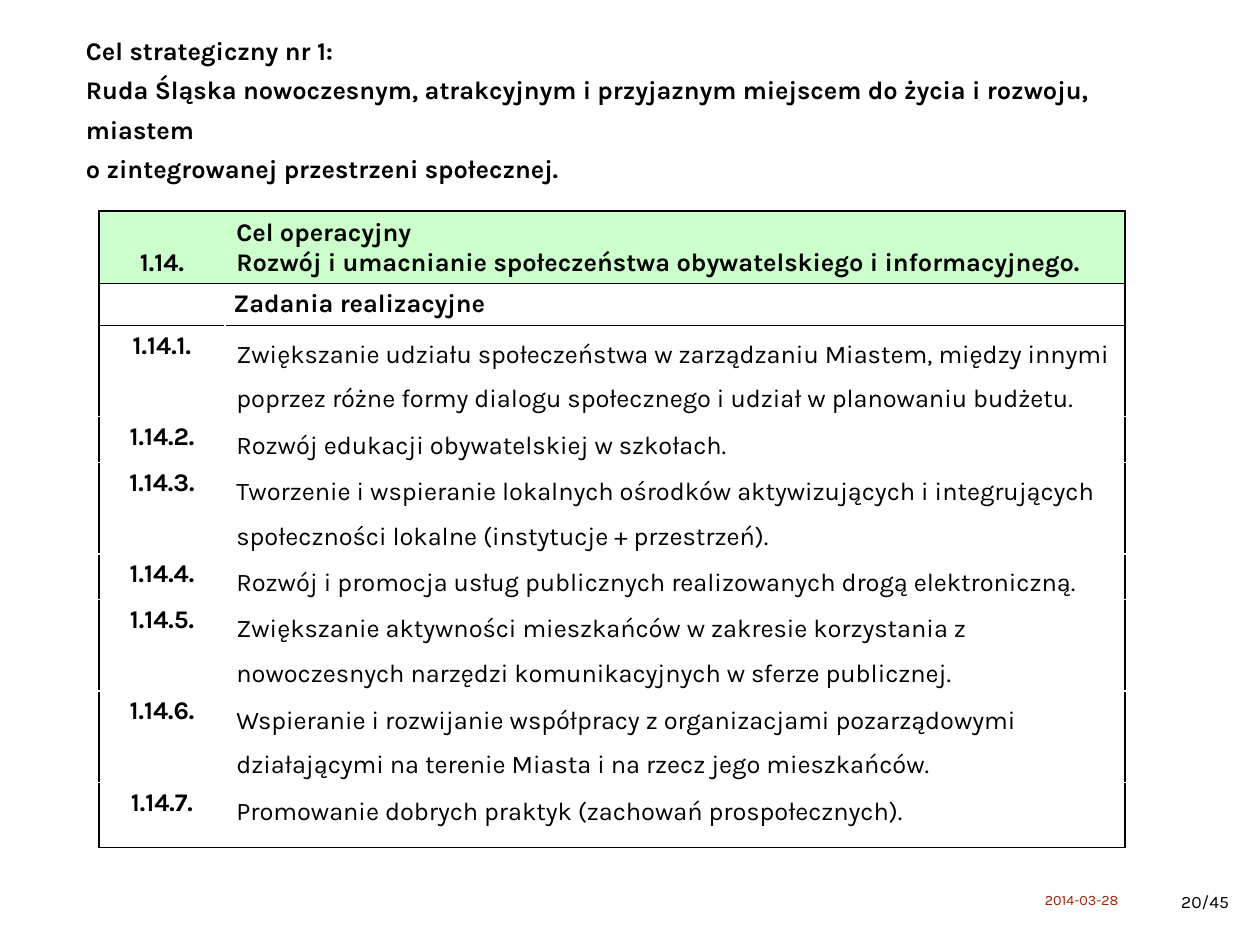
from pptx import Presentation
from pptx import util as u
from pptx.dml.color import RGBColor
from pptx.enum import text
from pptx.oxml import parse_xml
from pptx.oxml.ns import nsdecls

PX = 8000
FONT = "Karla"
COLORS = {"ink": "000000", "paper": "FFFFFF", "date": "A31F09", "header": "CCFFCC"}
LEFT, CENTER, RIGHT = text.PP_ALIGN.LEFT, text.PP_ALIGN.CENTER, text.PP_ALIGN.RIGHT
TOP, MIDDLE, BOTTOM = text.MSO_ANCHOR.TOP, text.MSO_ANCHOR.MIDDLE, text.MSO_ANCHOR.BOTTOM

GOAL = [
    "Cel strategiczny nr 1:",
    "Ruda Śląska nowoczesnym, atrakcyjnym i przyjaznym miejscem do życia i rozwoju, miastem",
    "o zintegrowanej przestrzeni społecznej.",
]
OPERATIONAL_GOAL = [
    "Cel operacyjny",
    "Rozwój i umacnianie społeczeństwa obywatelskiego i informacyjnego.",
]
TASKS = [
    "Zwiększanie udziału społeczeństwa w zarządzaniu Miastem, między innymi poprzez różne formy dialogu społecznego i udział w planowaniu budżetu.",
    "Rozwój edukacji obywatelskiej w szkołach.",
    "Tworzenie i wspieranie lokalnych ośrodków aktywizujących i integrujących społeczności lokalne (instytucje + przestrzeń).",
    "Rozwój i promocja usług publicznych realizowanych drogą elektroniczną.",
    "Zwiększanie aktywności mieszkańców w zakresie korzystania z nowoczesnych narzędzi komunikacyjnych w sferze publicznej.",
    "Wspieranie i rozwijanie współpracy z organizacjami pozarządowymi działającymi na terenie Miasta i na rzecz jego mieszkańców.",
    "Promowanie dobrych praktyk (zachowań prospołecznych).",
]
COL_WIDTHS = [126, 900]
ROW_HEIGHTS = [71, 41, 89, 45, 89, 45, 89, 89, 65]


def px(n):
    return u.Emu(n * PX)


def write(tf, lines, size=16, bold=False, color="ink", align=LEFT, spacing=None):
    p = tf.paragraphs[0]
    p.alignment = align
    if spacing:
        p.line_spacing = spacing
    for i, line in enumerate(lines):
        if i:
            p.add_line_break()
        r = p.add_run()
        r.text = line
        r.font.name = FONT
        r.font.size = u.Pt(size)
        r.font.bold = bold
        r.font.color.rgb = RGBColor.from_string(COLORS[color])
    return p


def add_text(s, box, lines, anchor=TOP, inset=(0, 0), **style):
    tf = s.shapes.add_textbox(*map(px, box)).text_frame
    tf.word_wrap = True
    tf.vertical_anchor = anchor
    tf.margin_left = tf.margin_right = px(inset[0])
    tf.margin_top = tf.margin_bottom = px(inset[1])
    write(tf, lines, **style)


def set_borders(cell, **sides):
    tc_pr = cell._tc.get_or_add_tcPr()
    for side in "LRTB":
        color = sides.get(side)
        fill = (f'<a:solidFill><a:srgbClr val="{COLORS[color]}"/></a:solidFill>'
                if color else "<a:noFill/>")
        tc_pr.append(parse_xml(f'<a:ln{side} {nsdecls("a")} w="12700">{fill}</a:ln{side}>'))


def fill_cell(cell, lines, borders, fill=None, anchor=TOP, **style):
    set_borders(cell, **borders)
    if fill:
        cell.fill.solid()
        cell.fill.fore_color.rgb = RGBColor.from_string(COLORS[fill])
    else:
        cell.fill.background()
    cell.vertical_anchor = anchor
    return write(cell.text_frame, lines, **style)


def add_task(table, row, number, task, first, last):
    edges = {"T": "ink" if first else "paper", "B": "ink" if last else "paper"}
    label, body = table.cell(row, 0), table.cell(row, 1)
    fill_cell(label, [number], {"L": "ink", "R": "paper", **edges}, bold=True, align=CENTER)
    body.margin_top = body.margin_bottom = 0
    fill_cell(body, [task], {"L": "paper", "R": "ink", **edges}, spacing=1.5)


def add_goal_table(s):
    frame = s.shapes.add_table(len(ROW_HEIGHTS), len(COL_WIDTHS), px(99), px(211),
                               px(sum(COL_WIDTHS)), px(sum(ROW_HEIGHTS)))
    table = frame.table
    table.first_row = table.horz_banding = False
    for column, width in zip(table.columns, COL_WIDTHS):
        column.width = px(width)
    for row, height in zip(table.rows, ROW_HEIGHTS):
        row.height = px(height)

    header = {"fill": "header", "anchor": BOTTOM, "bold": True}
    fill_cell(table.cell(0, 0), ["1.14."], dict.fromkeys("LTB", "ink"), align=CENTER, **header)
    fill_cell(table.cell(0, 1), OPERATIONAL_GOAL, dict.fromkeys("RTB", "ink"), **header)

    table.cell(1, 0).merge(table.cell(1, 1))
    box = dict.fromkeys("LRTB", "ink")
    p = fill_cell(table.cell(1, 0), ["Zadania realizacyjne"], box, bold=True)
    p._p.get_or_add_pPr().set("marL", str(px(123)))
    set_borders(table.cell(1, 1), **box)

    for i, task in enumerate(TASKS, 1):
        add_task(table, i + 1, f"1.14.{i}.", task, i == 1, i == len(TASKS))


def main():
    prs = Presentation()
    prs.slide_width, prs.slide_height = px(1260), px(945)
    s = prs.slides.add_slide(prs.slide_layouts[6])
    add_text(s, (1164, 884, 78, 46), ["20/45"], inset=(13, 7), size=11, align=RIGHT)
    add_text(s, (1045, 885, 109, 30), ["2014-03-28"], anchor=MIDDLE, size=9, color="date")
    add_text(s, (86, 71, 1106, 113), GOAL, anchor=BOTTOM, bold=True, spacing=1.3)
    add_goal_table(s)
    prs.save("out.pptx")


if __name__ == "__main__":
    main()
